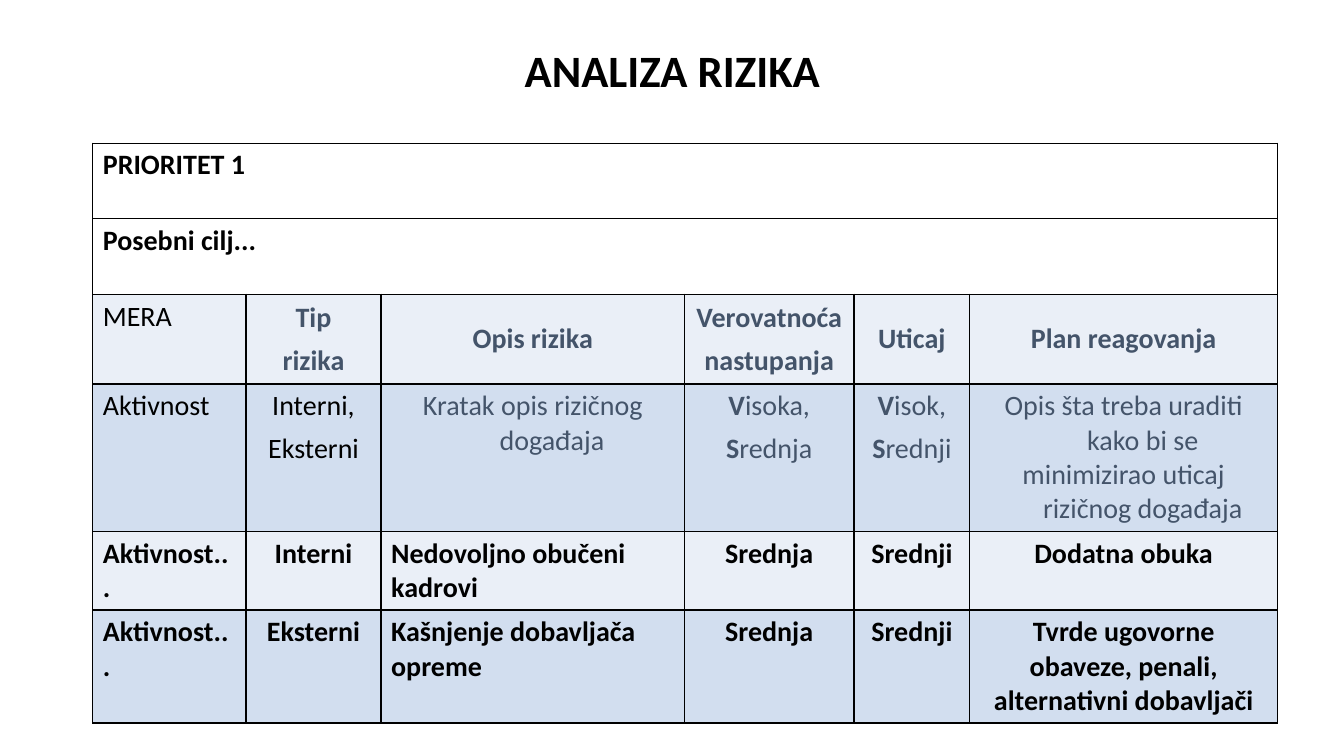
from lxml.etree import SubElement
from pptx import Presentation
from pptx.dml.color import RGBColor
from pptx.enum.text import MSO_ANCHOR as ANCHOR, PP_ALIGN as ALIGN
from pptx.oxml.ns import qn
from pptx.util import Inches, Pt

FONT = "Calibri"
COLORS = {"text": "000000", "guide": "44546A", "light": "EAEFF7",
          "blue": "D2DEEF", "border": "000000"}
COL_WIDTHS = [1.52, 1.34, 3.01, 1.68, 1.15, 3.05]
ROW_HEIGHTS = [0.75, 0.75, 0.89, 1.2, 0.75, 0.79]
HANGING = 0.38
TEXT_SIZE = 20

BANNERS = ["PRIORITET 1", "Posebni cilj..."]
# A cell is a list of paragraphs; text before "|" is a bold initial.
HEADINGS = [["MERA"], ["Tip", "rizika"], ["Opis rizika"],
            ["Verovatnoća", "nastupanja"], ["Uticaj"], ["Plan reagovanja"]]
GUIDANCE = [["Aktivnost"], ["Interni,", "Eksterni"],
            ["Kratak opis rizičnog događaja"],
            ["V|isoka,", "S|rednja"], ["V|isok,", "S|rednji"],
            ["Opis šta treba uraditi kako bi se",
             "minimizirao uticaj rizičnog događaja"]]
RISKS = [
    ["Aktivnost...", "Interni", "Nedovoljno obučeni kadrovi",
     "Srednja", "Srednji", "Dodatna obuka"],
    ["Aktivnost...", "Eksterni", "Kašnjenje dobavljača opreme",
     "Srednja", "Srednji",
     "Tvrde ugovorne obaveze, penali, alternativni dobavljači"],
]


def add_run(p, text, size=TEXT_SIZE, color="text", bold=True):
    r = p.add_run()
    r.text = text
    r.font.name, r.font.size, r.font.bold = FONT, Pt(size), bold
    r.font.color.rgb = RGBColor.from_string(COLORS[color])


def style_cell(cell, fill=None):
    """Draw the four borders, then the fill, in the order the schema asks."""
    tc_pr = cell._tc.get_or_add_tcPr()
    for side in ("a:lnL", "a:lnR", "a:lnT", "a:lnB"):
        ln = SubElement(tc_pr, qn(side), w=str(Pt(1)))
        solid = SubElement(ln, qn("a:solidFill"))
        SubElement(solid, qn("a:srgbClr"), val=COLORS["border"])
    if fill:
        cell.fill.solid()
        cell.fill.fore_color.rgb = RGBColor.from_string(COLORS[fill])
    else:
        cell.fill.background()


def write_cell(cell, paragraphs, align=ALIGN.LEFT, hanging=False,
               color="text", bold=True):
    tf = cell.text_frame
    for i, text in enumerate(paragraphs):
        p = tf.add_paragraph() if i else tf.paragraphs[0]
        p.alignment = align
        if hanging:
            p_pr = p._p.get_or_add_pPr()
            p_pr.set("marL", str(Inches(HANGING)))
            p_pr.set("indent", str(-Inches(HANGING)))
            p.space_after = Pt(0.3 * TEXT_SIZE)
        initial, _, rest = text.rpartition("|")
        if initial:
            add_run(p, initial, color=color)
        add_run(p, rest, color=color, bold=bold)


def add_title(s, left, top, width, height):
    title = s.shapes.title
    title.left, title.top = Inches(left), Inches(top)
    title.width, title.height = Inches(width), Inches(height)
    tf = title.text_frame
    tf.vertical_anchor = ANCHOR.MIDDLE
    p = tf.paragraphs[0]
    p.alignment, p.line_spacing = ALIGN.CENTER, 0.9
    add_run(p, "ANALIZA RIZIKA", size=32)


def fill_banners(table):
    for row, text in enumerate(BANNERS):
        table.cell(row, 0).merge(table.cell(row, len(COL_WIDTHS) - 1))
        write_cell(table.cell(row, 0), [text])


def fill_headings(table, row):
    for col, paragraphs in enumerate(HEADINGS):
        cell = table.cell(row, col)
        if col == 0:
            write_cell(cell, paragraphs, bold=False)
        else:
            cell.vertical_anchor = ANCHOR.MIDDLE
            write_cell(cell, paragraphs, ALIGN.CENTER, True, "guide")


def fill_guidance(table, row):
    for col, paragraphs in enumerate(GUIDANCE):
        write_cell(table.cell(row, col), paragraphs,
                   ALIGN.CENTER if col else ALIGN.LEFT, hanging=col > 0,
                   color="guide" if col > 1 else "text", bold=False)
    plan = table.cell(row, len(GUIDANCE) - 1)
    plan.text_frame.paragraphs[0].space_after = Pt(0)


def fill_risks(table, first_row):
    for row, risk in enumerate(RISKS, first_row):
        for col, text in enumerate(risk):
            align = ALIGN.LEFT if col in (0, 2) else ALIGN.CENTER
            write_cell(table.cell(row, col), [text], align)


def add_risk_table(s, left, top):
    table = s.shapes.add_table(
        len(ROW_HEIGHTS), len(COL_WIDTHS), Inches(left), Inches(top),
        Inches(sum(COL_WIDTHS)), Inches(sum(ROW_HEIGHTS))).table
    table.first_row = table.horz_banding = False
    for column, width in zip(table.columns, COL_WIDTHS):
        column.width = Inches(width)
    for i, height in enumerate(ROW_HEIGHTS):
        table.rows[i].height = Inches(height)
        band = None if i < len(BANNERS) else ("light", "blue")[i % 2]
        for cell in table.rows[i].cells:
            style_cell(cell, band)
    fill_banners(table)
    fill_headings(table, 2)
    fill_guidance(table, 3)
    fill_risks(table, 4)


def main():
    prs = Presentation()
    prs.slide_width, prs.slide_height = Inches(13.33), Inches(7.5)
    s = prs.slides.add_slide(prs.slide_layouts[5])
    add_title(s, 0.92, 0, 11.5, 1.45)
    add_risk_table(s, 0.92, 1.42)
    prs.save("out.pptx")


if __name__ == "__main__":
    main()
